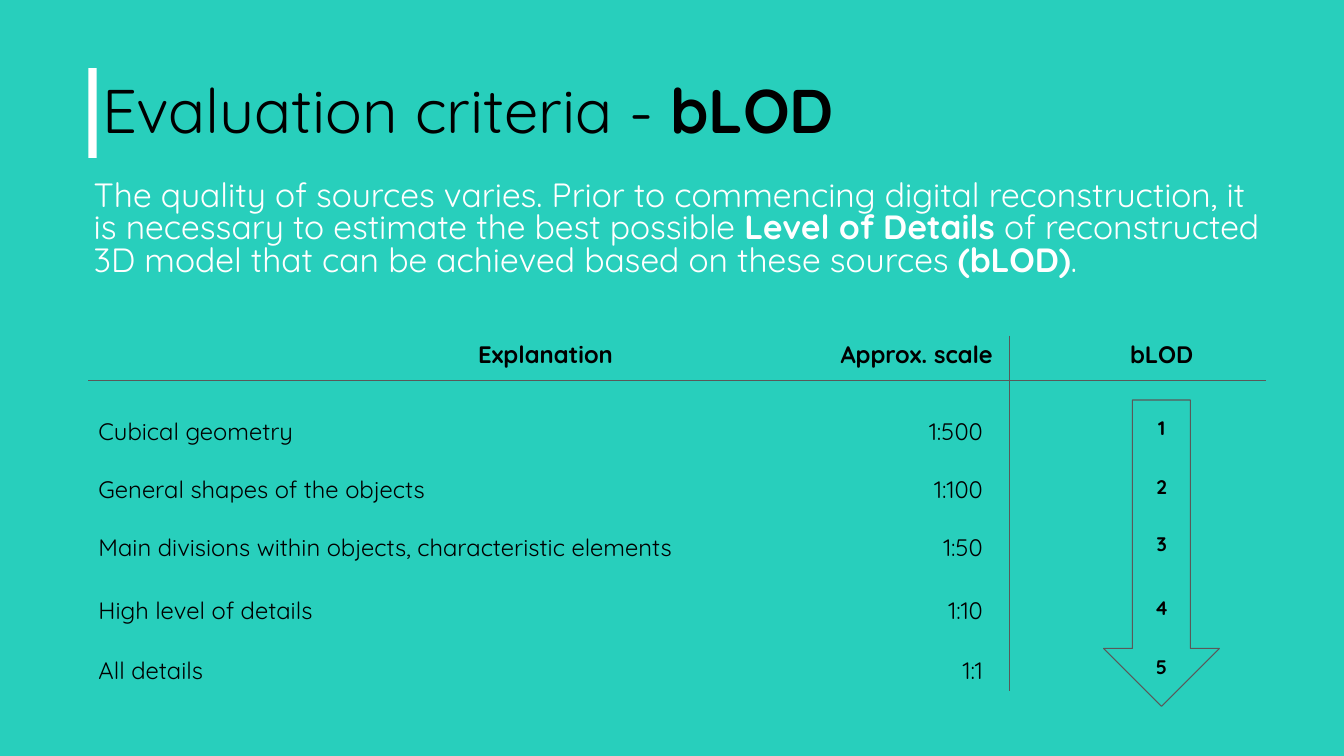
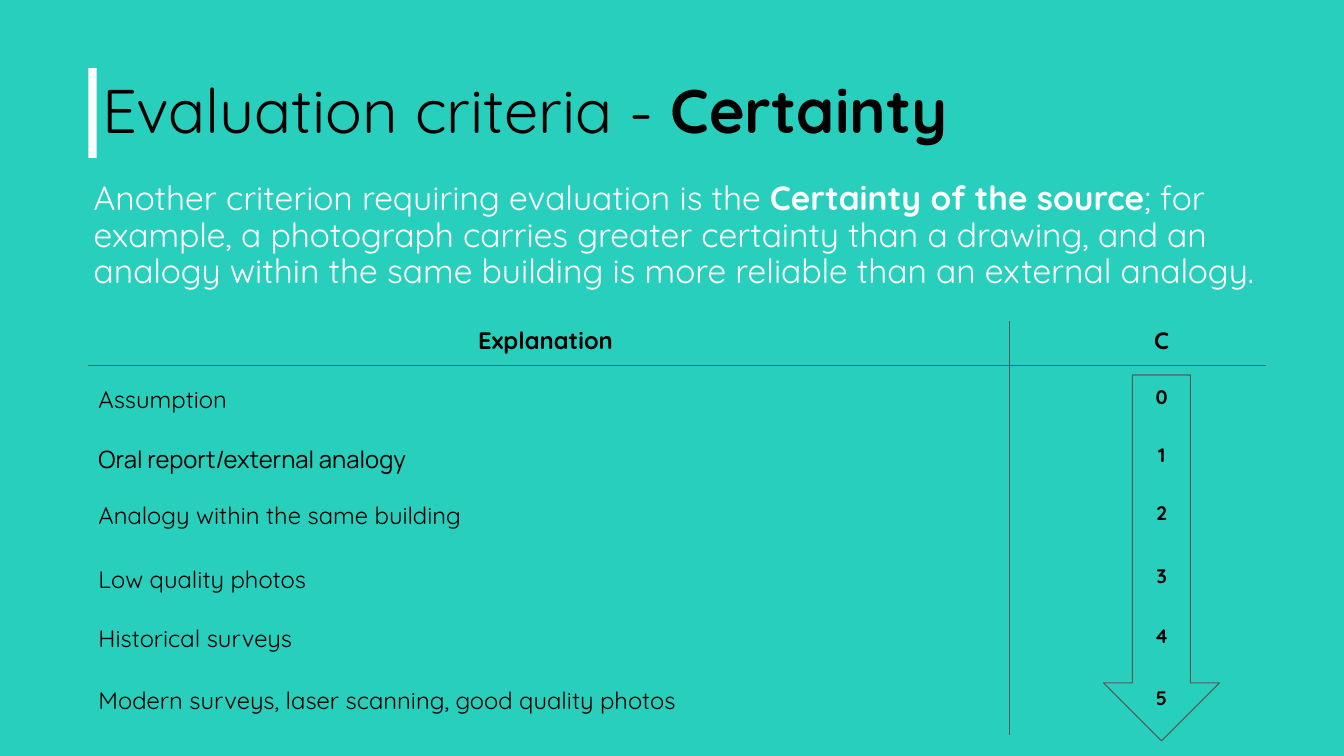
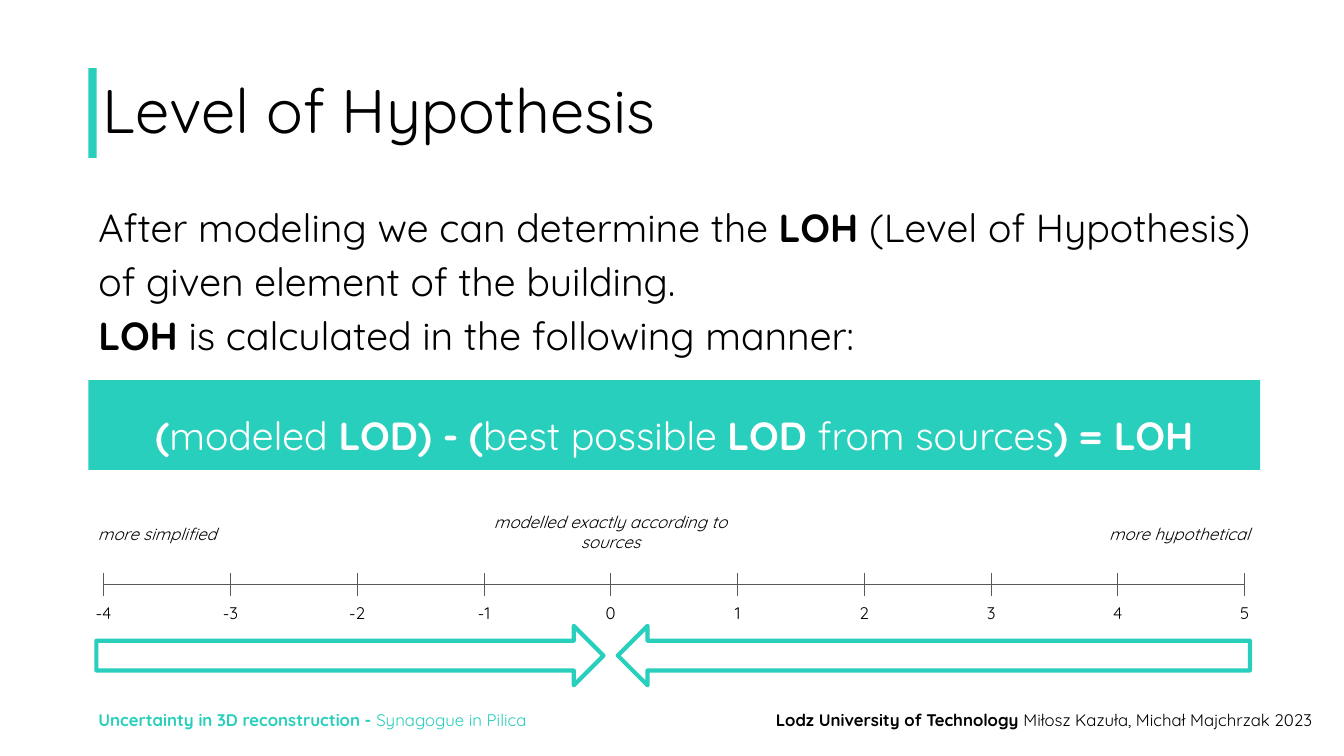
from dataclasses import dataclass, replace
from typing import NamedTuple, Optional

from lxml import etree
from pptx import Presentation
from pptx.dml.color import RGBColor
from pptx.enum.shapes import MSO_CONNECTOR, MSO_SHAPE
from pptx.enum.text import MSO_ANCHOR, MSO_AUTO_SIZE, PP_ALIGN
from pptx.oxml.ns import qn
from pptx.shapes.autoshape import Shape
from pptx.slide import Slide
from pptx.text.text import TextFrame
from pptx.util import Cm, Pt

LEFT, CENTER, RIGHT = PP_ALIGN.LEFT, PP_ALIGN.CENTER, PP_ALIGN.RIGHT
TOP, MIDDLE = MSO_ANCHOR.TOP, MSO_ANCHOR.MIDDLE
RECTANGLE = MSO_SHAPE.RECTANGLE
DOWN_ARROW, RIGHT_ARROW, LEFT_ARROW = (
    MSO_SHAPE.DOWN_ARROW, MSO_SHAPE.RIGHT_ARROW, MSO_SHAPE.LEFT_ARROW)
STRAIGHT = MSO_CONNECTOR.STRAIGHT
NO_AUTOFIT = MSO_AUTO_SIZE.NONE
PLAIN_TABLE_STYLE = "{2D5ABB26-0587-4C30-8999-92F81FD0307C}"


@dataclass(frozen=True)
class Theme:
    teal: str = "28CFBC"
    white: str = "FFFFFF"
    black: str = "000000"
    grey: str = "595959"
    font: str = "Quicksand"
    alternate_font: str = "Manrope"
    title: int = 44
    lead: int = 28
    body: int = 24
    row: int = 17
    score: int = 14
    small: int = 12
    thin: float = 0.75
    thick: float = 3


THEME = Theme()


class Span(NamedTuple):
    text: str
    bold: bool = False


class Area(NamedTuple):
    left: float
    top: float
    width: float
    height: float


class Inset(NamedTuple):
    side: float = 0.25
    top: float = 0.25


@dataclass(frozen=True)
class TextStyle:
    size: int
    color: str = THEME.black
    bold: bool = False
    italic: bool = False
    align: PP_ALIGN = LEFT
    spacing: float = 1.0
    font: str = THEME.font


@dataclass(frozen=True)
class Column:
    heading: str
    width: float
    style: TextStyle
    heading_align: PP_ALIGN
    left: float = 0.25
    right: float = 0.25
    heading_left: float = 0.25
    heading_right: float = 0.25


@dataclass(frozen=True)
class Criterion:
    name: str
    lead: list[Span]
    lead_spacing: float
    columns: list[Column]
    rows: list[tuple[str, ...]]
    top: float
    gap: float
    divider_end: float
    arrow: Area


TITLE_STYLE = TextStyle(THEME.title, spacing=0.9)
ROW_STYLE = TextStyle(THEME.row)
SCORE_STYLE = TextStyle(THEME.score, bold=True, align=CENTER)
LABEL_STYLE = TextStyle(THEME.small, align=CENTER)
NARROW = Inset(0.25, 0.13)

EDGE = 2.23
TITLE_AREA = Area(2.33, 1.02, 22.5, 3.68)
MARKER_AREA = Area(EDGE, 1.72, 0.21, 2.26)
LEAD_AREA = Area(2.11, 4.45, 30.25, 3.84)
HEADER_HEIGHT, CELL_TOP = 1.27, 0.25
ROW_HEIGHTS = (1.47, 1.45, 1.6, 1.5, 1.55, 1.24)
DIVIDER, TABLE_END = 25.45, 31.9
SCORE_COLUMN = Column("bLOD", TABLE_END - DIVIDER, SCORE_STYLE, CENTER,
                      1.2, 0, 1.2, 0)

CRITERIA = [
    Criterion(
        "bLOD",
        [Span("The quality of sources varies. Prior to commencing digital "
              "reconstruction, it is necessary to estimate the best possible "),
         Span("Level of Details", True),
         Span(" of reconstructed 3D model that can be achieved based on these sources "),
         Span("(bLOD)", True), Span(".")],
        0.8,
        [Column("Explanation", 17.94, ROW_STYLE, CENTER, heading_left=5.35),
         Column("Approx. scale", 5.28, replace(ROW_STYLE, align=RIGHT), RIGHT,
                right=0.68, heading_right=0.43),
         SCORE_COLUMN],
        [("Cubical geometry", "1:500", "1"),
         ("General shapes of the objects", "1:100", "2"),
         ("Main divisions within objects, characteristic elements", "1:50", "3"),
         ("High level of details", "1:10", "4"),
         ("All details", "1:1", "5")],
        8.31, 0.66, 17.42, Area(27.81, 10.08, 2.92, 7.72)),
    Criterion(
        "Certainty",
        [Span("Another criterion requiring evaluation is the "),
         Span("Certainty of the source", True),
         Span("; for example, a photograph carries greater certainty than a drawing, "
              "and an analogy within the same building is more reliable than an "
              "external analogy.")],
        0.9,
        [Column("Explanation", 23.22, ROW_STYLE, CENTER, heading_right=0.43),
         replace(SCORE_COLUMN, heading="C")],
        [("Assumption", "0"),
         ("Oral report/external analogy", "1"),
         ("Analogy within the same building", "2"),
         ("Low quality photos", "3"),
         ("Historical surveys", "4"),
         ("Modern surveys, laser scanning, good quality photos", "5")],
        7.95, 0.23, 18.52, Area(27.81, 9.45, 2.92, 9.22)),
]
ALTERNATE_FONT_ROWS = {"Oral report/external analogy"}


def rgb(color: str) -> RGBColor:
    return RGBColor.from_string(color)


def write(frame: TextFrame, spans: list[Span], style: TextStyle) -> None:
    para = frame.paragraphs[0]
    properties = para._p.get_or_add_pPr()
    properties.set("marL", "0")
    properties.set("indent", "0")
    etree.SubElement(properties, qn("a:buNone"))
    para.alignment = style.align
    para.line_spacing = style.spacing
    para.space_before = Pt(0)
    para.font.name = style.font
    para.font.size = Pt(style.size)
    para.font.bold = style.bold
    para.font.italic = style.italic
    para.font.color.rgb = rgb(style.color)
    for span in spans:
        run = para.add_run()
        run.text = span.text.rstrip("\n")
        if span.bold:
            run.font.bold = True
        if span.text.endswith("\n"):
            para.add_line_break()


def set_frame(frame: TextFrame, inset: Inset, anchor: MSO_ANCHOR) -> None:
    frame.word_wrap = True
    frame.auto_size = NO_AUTOFIT
    frame.vertical_anchor = anchor
    frame.margin_left = frame.margin_right = Cm(inset.side)
    frame.margin_top = frame.margin_bottom = Cm(inset.top)


def fill_placeholder(box: Shape, area: Area, spans: list[Span], style: TextStyle,
                     inset: Inset = NARROW, anchor: MSO_ANCHOR = TOP) -> None:
    box.left, box.top, box.width, box.height = map(Cm, area)
    set_frame(box.text_frame, inset, anchor)
    write(box.text_frame, spans, style)


def add_text(page: Slide, area: Area, spans: list[Span], style: TextStyle,
             inset: Inset = Inset(), anchor: MSO_ANCHOR = TOP) -> None:
    box = page.shapes.add_textbox(*map(Cm, area))
    set_frame(box.text_frame, inset, anchor)
    write(box.text_frame, spans, style)


def add_block(page: Slide, kind: MSO_SHAPE, area: Area, fill: Optional[str] = None,
              line: Optional[str] = None, weight: float = THEME.thin) -> Shape:
    block = page.shapes.add_shape(kind, *map(Cm, area))
    block.shadow.inherit = False
    if fill:
        block.fill.solid()
        block.fill.fore_color.rgb = rgb(fill)
    else:
        block.fill.background()
    if line:
        block.line.color.rgb = rgb(line)
        block.line.width = Pt(weight)
    else:
        block.line.fill.background()
    return block


def add_line(page: Slide, x1: float, y1: float, x2: float, y2: float) -> None:
    line = page.shapes.add_connector(STRAIGHT, Cm(x1), Cm(y1), Cm(x2), Cm(y2))
    line.line.color.rgb = rgb(THEME.grey)
    line.line.width = Pt(THEME.thin)
    etree.SubElement(line._element.spPr, qn("a:effectLst"))


def add_page(deck: Presentation, title: list[Span], marker: str) -> Slide:
    page = deck.slides.add_slide(deck.slide_layouts[1])
    fill_placeholder(page.shapes.title, TITLE_AREA, title, TITLE_STYLE, anchor=MIDDLE)
    add_block(page, RECTANGLE, MARKER_AREA, marker)
    return page


def add_criteria_table(page: Slide, criterion: Criterion) -> None:
    columns = criterion.columns
    heights = [HEADER_HEIGHT, *ROW_HEIGHTS[:len(criterion.rows)]]
    heights[1] += criterion.gap
    table = page.shapes.add_table(len(heights), len(columns), Cm(EDGE),
                                  Cm(criterion.top), Cm(TABLE_END - EDGE),
                                  Cm(sum(heights))).table
    table.first_row = table.horz_banding = False
    table._tbl.tblPr.find(qn("a:tableStyleId")).text = PLAIN_TABLE_STYLE
    headings = tuple(column.heading for column in columns)
    for y, texts in enumerate([headings, *criterion.rows]):
        table.rows[y].height = Cm(heights[y])
        for x, (column, text) in enumerate(zip(columns, texts)):
            table.columns[x].width = Cm(column.width)
            cell = table.cell(y, x)
            style = column.style
            if y == 0:
                style = TextStyle(THEME.row, bold=True, align=column.heading_align)
            elif text in ALTERNATE_FONT_ROWS:
                style = replace(style, font=THEME.alternate_font)
            write(cell.text_frame, [Span(text)], style)
            cell.vertical_anchor = TOP
            cell.margin_left = Cm(column.left if y else column.heading_left)
            cell.margin_right = Cm(column.right if y else column.heading_right)
            cell.margin_top = Cm(CELL_TOP + (criterion.gap if y == 1 else 0))
            cell.margin_bottom = Cm(0)
            cell.fill.background()
    add_line(page, DIVIDER, criterion.top + 0.15, DIVIDER, criterion.divider_end)
    header_end = criterion.top + HEADER_HEIGHT
    add_line(page, EDGE, header_end, TABLE_END, header_end)


def add_criterion_page(deck: Presentation, criterion: Criterion) -> None:
    title = [Span("Evaluation criteria - "), Span(criterion.name, True)]
    page = add_page(deck, title, THEME.white)
    page.background.fill.solid()
    page.background.fill.fore_color.rgb = rgb(THEME.teal)
    fill_placeholder(page.placeholders[1], LEAD_AREA, criterion.lead,
                     TextStyle(THEME.body, THEME.white, spacing=criterion.lead_spacing))
    add_criteria_table(page, criterion)
    add_block(page, DOWN_ARROW, criterion.arrow, line=THEME.grey)


def add_scale(page: Slide) -> None:
    first, last, axis = 2.61, 31.37, 14.73
    values = range(-4, 6)
    step = (last - first) / (len(values) - 1)
    add_line(page, first, axis, last, axis)
    for index, value in enumerate(values):
        x = round(first + index * step, 2)
        add_line(page, x, axis - 0.29, x, axis + 0.29)
        add_text(page, Area(x - 0.89, 14.94, 1.78, 1.02), [Span(str(value))], LABEL_STYLE)
    for area, text, align in (
        (Area(2.22, 12.95, 4.47, 1.02), "more simplified", LEFT),
        (Area(11.58, 12.64, 7.62, 1.55), "modelled exactly according to sources", CENTER),
        (Area(24.97, 12.95, 6.78, 1.02), "more hypothetical", RIGHT),
    ):
        add_text(page, area, [Span(text)], replace(LABEL_STYLE, italic=True, align=align))
    for kind, left, width in ((RIGHT_ARROW, 2.43, 12.78), (LEFT_ARROW, 15.57, 15.93)):
        add_block(page, kind, Area(left, 15.77, width, 1.5), line=THEME.teal,
                  weight=THEME.thick)


def add_hypothesis_page(deck: Presentation) -> None:
    page = add_page(deck, [Span("Level of Hypothesis")], THEME.teal)
    lead = TextStyle(THEME.lead, spacing=1.15)
    fill_placeholder(
        page.placeholders[1], Area(EDGE, 4.7, 30.53, 5.05),
        [Span("After modeling we can determine the "), Span("LOH ", True),
         Span("(Level of Hypothesis) of given element of the building.\n"),
         Span("LOH", True), Span(" is calculated in the following manner:")],
        lead, Inset())
    band = add_block(page, RECTANGLE, Area(EDGE, 9.58, 29.53, 2.26), THEME.teal)
    set_frame(band.text_frame, Inset(0.25, 0.6), TOP)
    band.text_frame.margin_bottom = Cm(0)
    write(band.text_frame,
          [Span("(", True), Span("modeled"), Span(" LOD) - (", True),
           Span("best possible "), Span("LOD ", True), Span("from sources"),
           Span(") = LOH", True)],
          replace(lead, color=THEME.white, align=CENTER))
    add_scale(page)
    for left, spans, color, align in (
        (EDGE, [Span("Uncertainty in 3D reconstruction -", True),
                Span(" Synagogue in Pilica")], THEME.teal, LEFT),
        (17, [Span("Lodz University of Technology", True),
              Span(" Miłosz Kazuła, Michał Majchrzak 2023")], THEME.black, RIGHT),
    ):
        add_text(page, Area(left, 17.76, 16.33, 0.89), spans,
                 TextStyle(THEME.small, color, align=align, spacing=0.7), NARROW, MIDDLE)


def main() -> None:
    deck = Presentation()
    deck.slide_width, deck.slide_height = Cm(33.87), Cm(19.05)
    for criterion in CRITERIA:
        add_criterion_page(deck, criterion)
    add_hypothesis_page(deck)
    deck.save("out.pptx")


if __name__ == "__main__":
    main()
